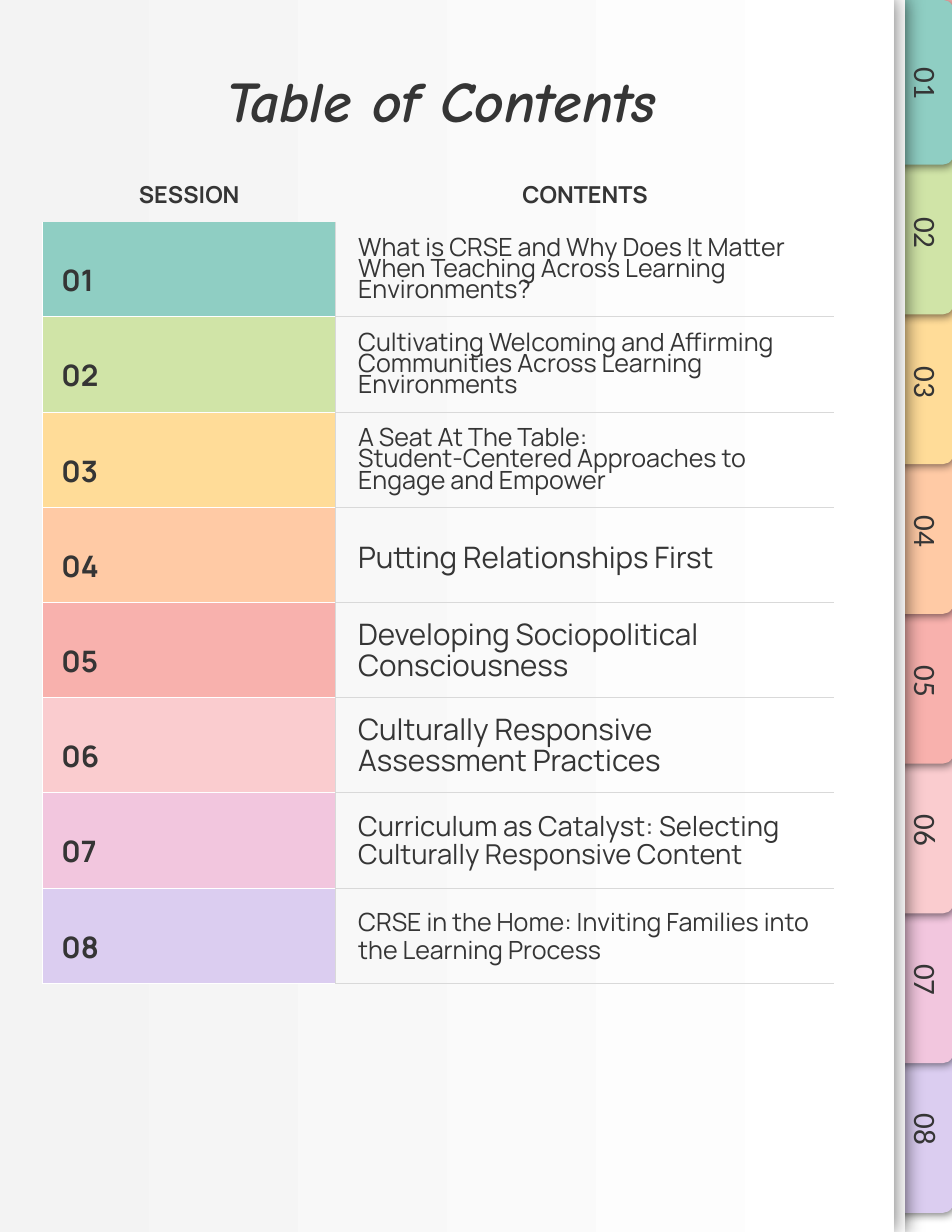
from dataclasses import dataclass

from lxml.etree import SubElement
from pptx import Presentation
from pptx.dml.color import RGBColor
from pptx.enum.shapes import MSO_SHAPE
from pptx.enum.text import MSO_ANCHOR, PP_ALIGN
from pptx.oxml.ns import qn
from pptx.util import Inches, Pt


@dataclass(frozen=True)
class Theme:
    ink: str = "353535"
    paper: str = "FFFFFF"
    paper_edge: str = "F3F3F3"
    back: str = "F8B1AD"
    rule: str = "D9D9D9"
    sessions: tuple = ("8FCEC3", "D0E4A7", "FFDC98", "FFCAA5",
                       "F8B1AD", "FACCCF", "F2C6DE", "DBCDF0")
    title_font: str = "Comic Neue"
    body_font: str = "Manrope"
    tab_font: str = "Calibri"
    title: float = 37
    tab: float = 20
    large: float = 19
    medium: float = 17.6
    small: float = 16.1
    header: float = 15
    hairline: float = 0.75


THEME = Theme()
COLS, ROWS = 85, 110
TABLE_LEFT, TABLE_TOP, ROW_H = 3.8, 11.3, 8.5
TABLE_COLS = (26.2, 44.5)
TAB_PITCH, TAB_TEXT_PITCH = 13.37, 13.34

# Session title, type size, line spacing
SESSIONS = [
    ("What is CRSE and Why Does It Matter When Teaching Across Learning Environments?",
     THEME.small, 0.71),
    ("Cultivating Welcoming and Affirming Communities Across Learning Environments",
     THEME.small, 0.71),
    ("A Seat At The Table:\nStudent-Centered Approaches to Engage and Empower",
     THEME.small, 0.71),
    ("Putting Relationships First", THEME.large, 1.0),
    ("Developing Sociopolitical Consciousness", THEME.large, 0.87),
    ("Culturally Responsive Assessment Practices", THEME.large, 0.87),
    ("Curriculum as Catalyst: Selecting Culturally Responsive Content",
     THEME.medium, 0.86),
    ("CRSE in the Home: Inviting Families into the Learning Process",
     THEME.small, 0.91),
]


def rgb(color):
    return RGBColor.from_string(color)


class Page:
    """Places styled elements on a grid of columns and rows."""

    def __init__(self, prs, theme):
        self.theme = theme
        self.col = prs.slide_width / COLS
        self.row = prs.slide_height / ROWS
        self.slide = prs.slides.add_slide(prs.slide_layouts[6])
        self.slide.background.fill.solid()
        self.slide.background.fill.fore_color.rgb = rgb(theme.back)

    def box(self, x, y, w, h):
        return (round(x * self.col), round(y * self.row),
                round(w * self.col), round(h * self.row))

    def style(self, tf, font, size, bold=False, italic=False,
              align=PP_ALIGN.LEFT, spacing=None):
        for p in tf.paragraphs:
            p.alignment = align
            if spacing:
                p.line_spacing = spacing
            for r in p.runs:
                r.font.name, r.font.size = font, Pt(size)
                r.font.bold, r.font.italic = bold, italic
                r.font.color.rgb = rgb(self.theme.ink)

    def text(self, text, area, font, size, anchor=MSO_ANCHOR.MIDDLE,
             rotation=0, **style):
        sp = self.slide.shapes.add_textbox(*self.box(*area))
        sp.rotation = rotation
        tf = sp.text_frame
        tf.word_wrap = True
        tf.vertical_anchor = anchor
        tf.margin_left = tf.margin_right = Inches(0.1)
        tf.margin_top = tf.margin_bottom = Inches(0.1)
        tf.text = text
        self.style(tf, font, size, **style)

    def shape(self, kind, area, color, shadow=None, rotation=0):
        sp = self.slide.shapes.add_shape(kind, *self.box(*area))
        sp.rotation = rotation
        sp.fill.solid()
        sp.fill.fore_color.rgb = rgb(color)
        sp.line.fill.background()
        sp.shadow.inherit = False
        if shadow:
            self.cast_shadow(sp, *shadow)
        return sp

    def cast_shadow(self, sp, blur, dist, angle):
        effects = sp._element.spPr.find(qn("a:effectLst"))
        outer = SubElement(effects, qn("a:outerShdw"), blurRad=str(Pt(blur)),
                           dist=str(Pt(dist)), dir=str(angle * 60000),
                           algn="bl", rotWithShape="0")
        color = SubElement(outer, qn("a:srgbClr"), val="000000")
        SubElement(color, qn("a:alpha"), val="50000")

    def borders(self, cell, **colors):
        tc_pr = cell._tc.get_or_add_tcPr()
        for side in "LRTB":
            ln = SubElement(tc_pr, qn("a:ln" + side),
                            w=str(Pt(self.theme.hairline)))
            if side in colors:
                fill = SubElement(ln, qn("a:solidFill"))
                SubElement(fill, qn("a:srgbClr"), val=colors[side])
            else:
                SubElement(ln, qn("a:noFill"))

    def table(self, headers, fills):
        t = self.theme
        count = len(fills) + 1
        area = self.box(TABLE_LEFT, TABLE_TOP, sum(TABLE_COLS), ROW_H * count)
        table = self.slide.shapes.add_table(count, 2, *area).table
        table.first_row = table.horz_banding = False
        for column, width in zip(table.columns, TABLE_COLS):
            column.width = round(width * self.col)
        for row in table.rows:
            row.height = round(ROW_H * self.row)
        for i, header in enumerate(headers):
            cell = table.cell(0, i)
            self.borders(cell)
            cell.fill.background()
            cell.vertical_anchor = MSO_ANCHOR.BOTTOM
            cell.margin_top = cell.margin_bottom = Inches(0.1)
            cell.text_frame.text = header
            self.style(cell.text_frame, t.body_font, t.header, bold=True,
                       align=PP_ALIGN.CENTER)
        for i, color in enumerate(fills, 1):
            number, content = table.cell(i, 0), table.cell(i, 1)
            top = {"T": t.paper} if i > 1 else {}
            self.borders(number, L=t.paper, R=t.rule, B=t.paper, **top)
            number.fill.solid()
            number.fill.fore_color.rgb = rgb(color)
            top = {"T": t.rule} if i > 1 else {}
            self.borders(content, L=t.rule, B=t.rule, **top)
            content.fill.background()


def main():
    prs = Presentation()
    prs.slide_width, prs.slide_height = Inches(8.5), Inches(11)
    t = THEME
    s = Page(prs, t)

    # Side tabs, from the last to the first so that each overlaps the next
    strip = s.shape(MSO_SHAPE.RECTANGLE, (80.8, 85.8, 4.2, 24.2), t.paper)
    strip.line.color.rgb = rgb(t.paper)
    strip.line.width = Pt(t.hairline)
    for i, color in reversed(list(enumerate(t.sessions))):
        s.shape(MSO_SHAPE.ROUND_2_SAME_RECTANGLE,
                (75.1, 4.7 + TAB_PITCH * i, 14.7, 5.3), color,
                shadow=(5.6, 1.5, 61), rotation=90)

    # Paper sheets
    sheet_shadow = (12.4, 0.8, 0)
    s.shape(MSO_SHAPE.RECTANGLE, (1, 0, 79.8, ROWS), t.paper, sheet_shadow)
    sheet = s.shape(MSO_SHAPE.RECTANGLE, (0, 0, 79.8, ROWS), t.paper, sheet_shadow)
    sheet.fill.gradient()
    sheet.fill.gradient_angle = 0
    for stop, color, place in zip(sheet.fill.gradient_stops,
                                  (t.paper_edge, t.paper), (0, 1)):
        stop.color.rgb = rgb(color)
        stop.position = place

    # Tab numbers
    for i in range(len(SESSIONS)):
        s.text(f"{i + 1:02}", (76, 4.3 + TAB_TEXT_PITCH * i, 14.4, 6.3),
               t.tab_font, t.tab, anchor=MSO_ANCHOR.BOTTOM, rotation=90,
               align=PP_ALIGN.CENTER)

    # Contents table and title
    s.table(("SESSION", "CONTENTS"), t.sessions)
    s.text("Table of Contents", (TABLE_LEFT, 4.8, 71.2, 6.3), t.title_font,
           t.title, anchor=MSO_ANCHOR.TOP, bold=True, italic=True,
           align=PP_ALIGN.CENTER)

    # Session numbers and titles
    for i, (title, size, spacing) in enumerate(SESSIONS):
        y = TABLE_TOP + ROW_H * (i + 1)
        s.text(f"{i + 1:02}", (4.5, y + 1.7, 24.8, 7), t.body_font, t.large,
               bold=True)
        s.text(title, (31, y + 0.1, 43, 8.6), t.body_font, size, spacing=spacing)

    prs.save("out.pptx")


if __name__ == "__main__":
    main()
